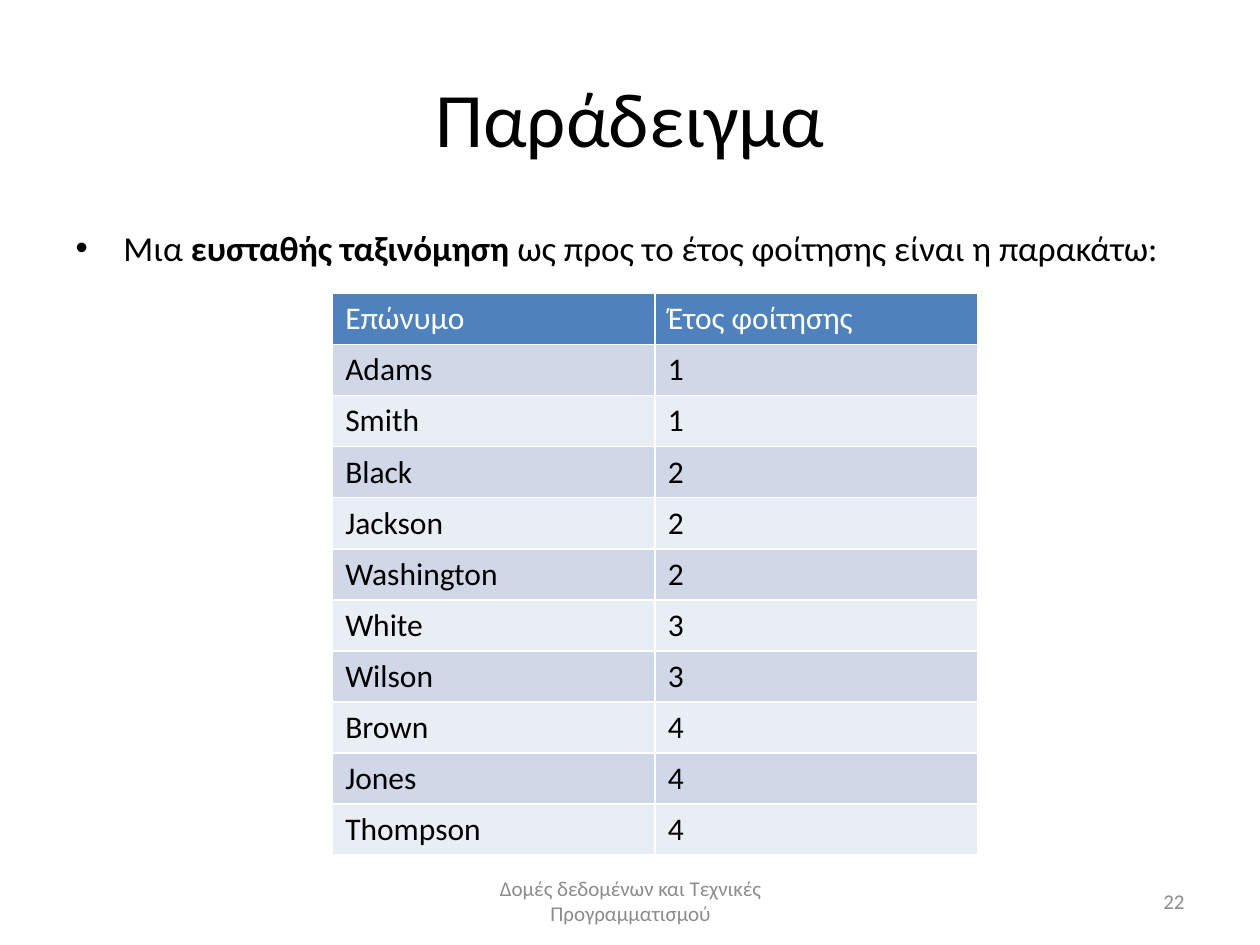
"""Build the slide that shows a stable sort by year of study."""
from dataclasses import dataclass

from pptx import Presentation
from pptx.dml.color import RGBColor
from pptx.enum.text import MSO_ANCHOR, PP_ALIGN
from pptx.util import Inches, Pt


@dataclass(frozen=True)
class Theme:
    """Font, type sizes and colours of the slide."""
    font: str = "Calibri"
    title_size: int = 44
    body_size: int = 20
    table_size: int = 18
    footer_size: int = 12
    ink: str = "000000"
    muted: str = "8C8C8C"
    header_ink: str = "FFFFFF"
    header_fill: str = "4F81BD"
    bands: tuple[str, str] = ("D0D8E8", "E9EDF4")


@dataclass(frozen=True)
class Area:
    """A rectangle in inches."""
    left: float
    top: float
    width: float
    height: float

    def lengths(self) -> tuple:
        """Return the four lengths in slide units."""
        return tuple(Inches(n) for n in (self.left, self.top, self.width, self.height))


@dataclass(frozen=True)
class Student:
    """One row of the table."""
    surname: str
    year: int


@dataclass(frozen=True)
class FooterItem:
    """A small text at the foot of the slide."""
    text: str
    area: Area
    alignment: PP_ALIGN


THEME = Theme()
WIDTH, HEIGHT, MARGIN = 10, 7.5, 0.5
CONTENT_WIDTH = WIDTH - 2 * MARGIN
TITLE_AREA = Area(MARGIN, 0.3, CONTENT_WIDTH, 1.25)
BODY_AREA = Area(MARGIN, 1.75, CONTENT_WIDTH, 4.95)
TABLE_AREA = Area(2.64, 2.33, 5.12, 4.46)
HEADINGS = ("Επώνυμο", "Έτος φοίτησης")
STUDENTS = (
    Student("Adams", 1), Student("Smith", 1),
    Student("Black", 2), Student("Jackson", 2), Student("Washington", 2),
    Student("White", 3), Student("Wilson", 3),
    Student("Brown", 4), Student("Jones", 4), Student("Thompson", 4),
)
FOOTER = (
    FooterItem("Δομές δεδομένων και Τεχνικές Προγραμματισμού",
               Area(3.42, 6.95, 3.17, 0.4), PP_ALIGN.CENTER),
    FooterItem("22", Area(7.17, 6.95, 2.33, 0.4), PP_ALIGN.RIGHT),
)


def style(para, size: int, color: str) -> None:
    """Set the font of a paragraph."""
    para.font.name = THEME.font
    para.font.size = Pt(size)
    para.font.color.rgb = RGBColor.from_string(color)


def place(shape, area: Area) -> None:
    """Move a placeholder to an area."""
    shape.left, shape.top, shape.width, shape.height = area.lengths()


def fill_title(box) -> None:
    """Write the title."""
    place(box, TITLE_AREA)
    box.text_frame.text = "Παράδειγμα"
    style(box.text_frame.paragraphs[0], THEME.title_size, THEME.ink)


def fill_body(box) -> None:
    """Write the bulleted sentence with its bold term."""
    place(box, BODY_AREA)
    para = box.text_frame.paragraphs[0]
    style(para, THEME.body_size, THEME.ink)
    properties = para._p.get_or_add_pPr()
    properties.set("marL", str(Inches(0.38)))
    properties.set("indent", str(Inches(-0.38)))
    for text, bold in (("Μια ", False), ("ευσταθής ταξινόμηση ", True),
                       ("ως προς το έτος φοίτησης είναι η παρακάτω:", False)):
        span = para.add_run()
        span.text = text
        span.font.bold = bold


def fill_cell(cell, text: str, fill: str, ink: str) -> None:
    """Write and colour one table cell."""
    cell.fill.solid()
    cell.fill.fore_color.rgb = RGBColor.from_string(fill)
    cell.text = text
    para = cell.text_frame.paragraphs[0]
    style(para, THEME.table_size, ink)
    para.font.bold = False


def add_student_table(page) -> None:
    """Add the table of students with alternating bands."""
    rows = [HEADINGS] + [(student.surname, str(student.year)) for student in STUDENTS]
    table = page.shapes.add_table(len(rows), len(HEADINGS), *TABLE_AREA.lengths()).table
    for row_index, row in enumerate(rows):
        fill = THEME.bands[(row_index - 1) % 2] if row_index else THEME.header_fill
        ink = THEME.ink if row_index else THEME.header_ink
        for column_index, text in enumerate(row):
            fill_cell(table.cell(row_index, column_index), text, fill, ink)


def add_footer_item(page, item: FooterItem) -> None:
    """Add one muted text at the foot of the slide."""
    frame = page.shapes.add_textbox(*item.area.lengths()).text_frame
    frame.word_wrap = True
    frame.vertical_anchor = MSO_ANCHOR.MIDDLE
    frame.text = item.text
    para = frame.paragraphs[0]
    para.alignment = item.alignment
    style(para, THEME.footer_size, THEME.muted)


def main() -> None:
    """Build and save the deck."""
    deck = Presentation()
    deck.slide_width, deck.slide_height = Inches(WIDTH), Inches(HEIGHT)
    page = deck.slides.add_slide(deck.slide_layouts[1])
    fill_title(page.shapes.title)
    fill_body(page.placeholders[1])
    for item in FOOTER:
        add_footer_item(page, item)
    add_student_table(page)
    deck.save("out.pptx")


if __name__ == "__main__":
    main()
